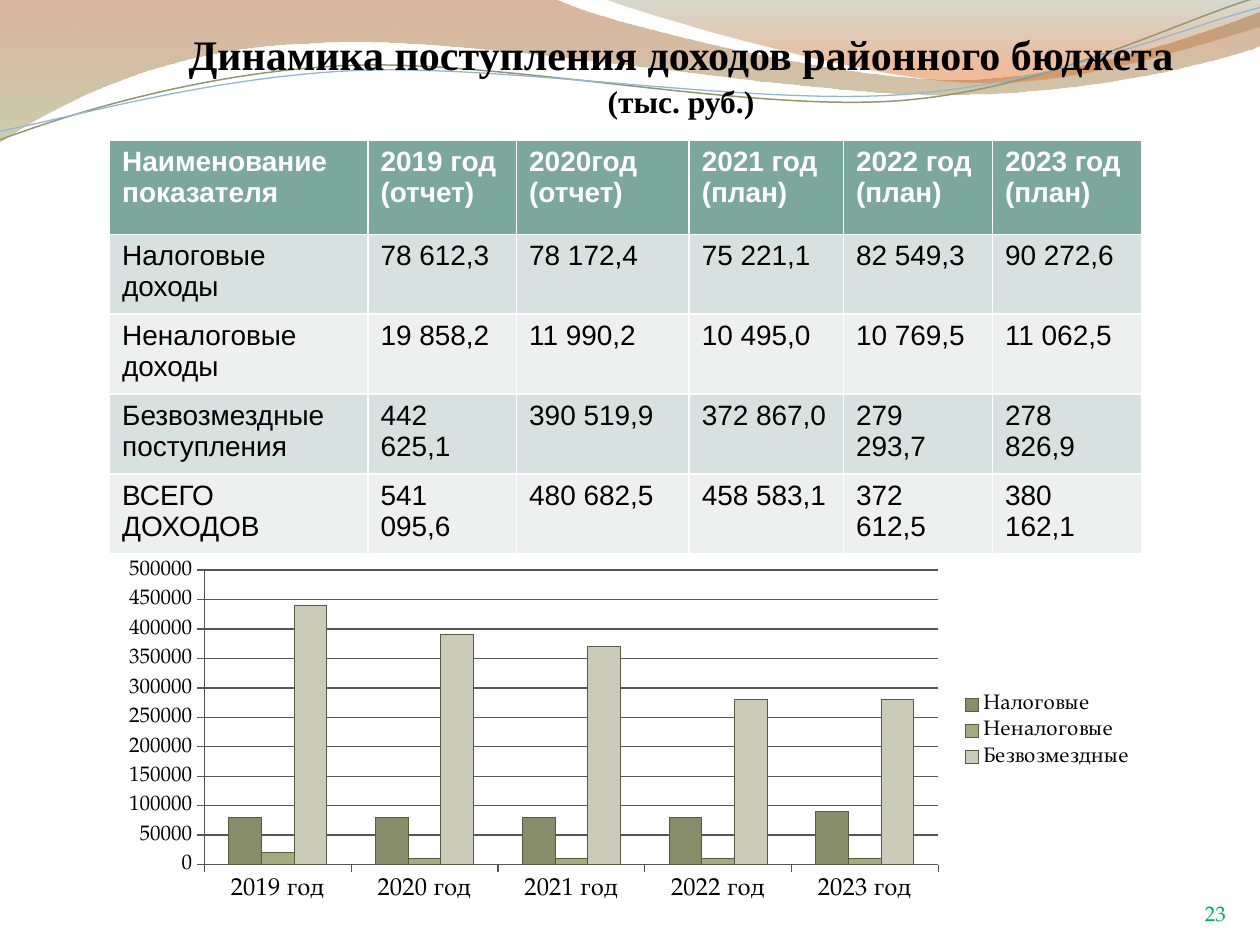
import dataclasses

import lxml.etree
import pptx
import pptx.chart.data
import pptx.dml.color
import pptx.enum.chart
import pptx.enum.text
import pptx.oxml.ns
import pptx.util

qn = pptx.oxml.ns.qn
Pt = pptx.util.Pt
ANCHOR = pptx.enum.text.MSO_ANCHOR
ALIGN = pptx.enum.text.PP_ALIGN


@dataclasses.dataclass(frozen=True)
class Theme:
    serif: str = "Times New Roman"
    sans: str = "Arial"
    body: str = "TeX Gyre Pagella"
    ink: str = "000000"
    white: str = "FFFFFF"
    header: str = "7BA79D"
    bands: tuple = ("D7E1DF", "ECF1EF")
    series: tuple = ("888D69", "A5AB81", "CACCB9")
    outline: str = "575B41"
    grid: str = "555555"
    number: str = "00B050"
    title_size: int = 24
    gap_size: int = 32
    unit_size: int = 18
    table_size: int = 16
    category_size: int = 14
    small_size: int = 12


HEADER = ["Наименование показателя", "2019 год (отчет)", "2020год (отчет)",
          "2021 год (план)", "2022 год (план)", "2023 год (план)"]
INCOME = [
    ["Налоговые доходы", "78 612,3", "78 172,4", "75 221,1", "82 549,3", "90 272,6"],
    ["Неналоговые доходы", "19 858,2", "11 990,2", "10 495,0", "10 769,5", "11 062,5"],
    ["Безвозмездные поступления", "442 625,1", "390 519,9", "372 867,0", "279 293,7", "278 826,9"],
    ["ВСЕГО ДОХОДОВ", "541 095,6", "480 682,5", "458 583,1", "372 612,5", "380 162,1"],
]
YEARS = [f"{year} год" for year in range(2019, 2024)]
SERIES = [
    ("Налоговые", (80000, 80000, 80000, 80000, 90000)),
    ("Неналоговые", (20000, 10000, 10000, 10000, 10000)),
    ("Безвозмездные", (440000, 390000, 370000, 280000, 280000)),
]

LEFT_WAVE = [(-0.1, -0.1), (44, -0.1), (47.6, 1.7, 66.4, 6.3, 75.8, 6.3), (85.3, 6.3, 95.8, 2.6, 100, 0.9),
             (100.1, 3.6), (98.3, 4.4, 87, 7.6, 74.6, 7.5), (62.2, 7.5, 38.2, 2.8, 25.7, 3.4),
             (12.9, 3.6, 4.6, 8.3, -0.1, 11.3)]
RIGHT_WAVE = [(47.9, -0.1), (50.9, 1.1, 68.2, 6.2, 76.9, 6.5), (85.6, 6.9, 96.1, 3.2, 100, 2.1), (100, 0)]
OLIVE_CURVE = [(0, 11.1), (4.8, 9.3, 15.8, 5.7, 27.7, 5.2), (39.5, 4.7, 59.3, 8.9, 71.3, 8),
               (83.3, 7.1, 93.8, 1.5, 99.8, -0.2)]
BLUE_CURVE = [(0, 10.4), (4.7, 9.6, 16.4, 6.1, 28.3, 5.6), (40.3, 5.1, 59.7, 8.4, 71.7, 7.5),
              (83.6, 6.7, 94.1, 2.1, 100, 0.6)]


def rgb(value):
    """Return a colour from its hexadecimal form."""
    return pptx.dml.color.RGBColor.from_string(value)


class SlideBuilder:
    """Draw elements on the current slide, on a grid of 100 columns and 75 rows."""

    def __init__(self, presentation, theme):
        """Add a blank slide and set up its grid."""
        self.theme = theme
        self.slide = presentation.slides.add_slide(presentation.slide_layouts[6])
        self.unit = presentation.slide_width // 100

    def span(self, *lengths):
        """Turn grid lengths into slide lengths."""
        return [round(length * self.unit) for length in lengths]

    def run(self, paragraph, text, size, font, colour, bold=False):
        """Add one styled run."""
        run = paragraph.add_run()
        run.text = text
        run.font.size, run.font.name, run.font.bold = Pt(size), font, bold
        run.font.color.rgb = rgb(colour)

    def outline(self, steps, close):
        """Add a shadowless freeform whose six-number steps are cubic curves."""
        anchors = [self.span(*step[-2:]) for step in steps]
        builder = self.slide.shapes.build_freeform(*anchors[0], scale=1.0)
        builder.add_line_segments(anchors[1:], close=close)
        shape = builder.convert_to_shape()
        shape.shadow.inherit = False
        segments = list(shape.element.spPr.iter(qn("a:lnTo")))
        for segment, step in zip(segments, steps[1:]):
            if len(step) == 2:
                continue
            curve = lxml.etree.Element(qn("a:cubicBezTo"))
            for x, y in zip(self.span(*step[::2]), self.span(*step[1::2])):
                lxml.etree.SubElement(curve, qn("a:pt"), x=str(x - shape.left), y=str(y - shape.top))
            segment.getparent().replace(segment, curve)
        return shape

    def wave(self, steps, stops):
        """Add a filled wave with a translucent vertical gradient."""
        shape = self.outline(steps, True)
        shape.line.fill.background()
        shape.fill.gradient()
        shape.fill.gradient_angle = 270
        elements = shape.element.spPr.iter(qn("a:gs"))
        for stop, element, (position, colour, opacity) in zip(shape.fill.gradient_stops, elements, stops):
            stop.color.rgb = rgb(colour)
            element.set("pos", str(position * 1000))
            lxml.etree.SubElement(element[0], qn("a:alpha")).set("val", str(opacity * 1000))

    def curve(self, steps, colour, width):
        """Add a thin open curve."""
        shape = self.outline(steps, False)
        shape.fill.background()
        shape.line.color.rgb = rgb(colour)
        shape.line.width = Pt(width)

    def text(self, box, runs, align, margin_right=0, indent=0):
        """Add a bottom-anchored text box of one paragraph."""
        frame = self.slide.shapes.add_textbox(*self.span(*box)).text_frame
        frame.word_wrap = True
        frame.vertical_anchor = ANCHOR.BOTTOM
        frame.margin_left = frame.margin_top = frame.margin_bottom = 0
        frame.margin_right = self.span(margin_right)[0]
        paragraph = frame.paragraphs[0]
        paragraph.alignment = align
        if indent:
            paragraph._p.get_or_add_pPr().set("marL", str(self.span(indent)[0]))
        for run in runs:
            self.run(paragraph, *run)

    def table(self, box, widths, heights, rows):
        """Add a table with a header and alternating bands."""
        theme = self.theme
        frame = self.slide.shapes.add_table(len(rows), len(widths), *self.span(*box))
        for column, width in zip(frame.table.columns, self.span(*widths)):
            column.width = width
        for index, (row, height, texts) in enumerate(zip(frame.table.rows, self.span(*heights), rows)):
            row.height = height
            heading = index == 0
            fill = theme.header if heading else theme.bands[(index - 1) % 2]
            colour = theme.white if heading else theme.ink
            for cell, text in zip(row.cells, texts):
                cell.fill.solid()
                cell.fill.fore_color.rgb = rgb(fill)
                self.run(cell.text_frame.paragraphs[0], text, theme.table_size, theme.sans, colour, heading)
        frame.height = self.span(box[3])[0]

    def chart(self, box, categories, series):
        """Add a clustered column chart with a legend on the right."""
        theme = self.theme
        data = pptx.chart.data.CategoryChartData()
        data.categories = categories
        for name, values in series:
            data.add_series(name, values)
        kind = pptx.enum.chart.XL_CHART_TYPE.COLUMN_CLUSTERED
        chart = self.slide.shapes.add_chart(kind, *self.span(*box), data).chart
        chart.has_title = False
        chart.font.name, chart.font.size = theme.body, Pt(theme.unit_size)
        chart.font.color.rgb = rgb(theme.ink)
        chart.has_legend = True
        chart.legend.position = pptx.enum.chart.XL_LEGEND_POSITION.RIGHT
        chart.legend.include_in_layout = False
        chart.legend.font.size = Pt(theme.small_size)
        plot = chart.plots[0]
        plot.gap_width, plot.vary_by_categories = 150, False
        for column, colour in zip(plot.series, theme.series):
            column.format.fill.solid()
            column.format.fill.fore_color.rgb = rgb(colour)
            column.format.line.color.rgb = rgb(theme.outline)
        axes = ((chart.category_axis, theme.category_size), (chart.value_axis, theme.small_size))
        for axis, size in axes:
            axis.tick_labels.font.size = Pt(size)
            axis.major_tick_mark = pptx.enum.chart.XL_TICK_MARK.OUTSIDE
            axis.format.line.color.rgb = rgb(theme.grid)
        scale = chart.value_axis
        scale.minimum_scale, scale.maximum_scale, scale.major_unit = 0, 500000, 50000
        scale.major_gridlines.format.line.color.rgb = rgb(theme.grid)


def main():
    """Build the budget income slide."""
    presentation = pptx.Presentation()
    presentation.slide_width, presentation.slide_height = pptx.util.Inches(10), pptx.util.Inches(7.5)
    theme = Theme()
    page = SlideBuilder(presentation, theme)
    page.wave(LEFT_WAVE, [(0, "AF5C29", 45), (100, "9DA66B", 55)])
    page.wave(RIGHT_WAVE, [(0, "7D835B", 30), (80, "DD6B24", 45)])
    page.curve(OLIVE_CURVE, "929772", 0.85)
    page.curve(BLUE_CURVE, "94B6D2", 0.75)
    title = [("Динамика поступления доходов районного бюджета", theme.title_size),
             (" ", theme.gap_size), ("(тыс. руб.)", theme.unit_size)]
    runs = [(text, size, theme.serif, theme.ink, True) for text, size in title]
    page.text((11.4, 1.6, 83.5, 7.9), runs, ALIGN.CENTER, margin_right=0.2, indent=2)
    page.table((8.7, 11.1, 81.9, 31.7), [20.5, 11.8, 13.7, 12.25, 11.82, 11.82],
               [7.5, 4.8, 5.7, 5.7, 3.3], [HEADER] + INCOME)
    page.chart((8.6, 43.85, 82.4, 28.3), YEARS, SERIES)
    page.text((77.3, 69.5, 20, 4), [("23", theme.small_size, theme.body, theme.number)], ALIGN.RIGHT)
    presentation.save("out.pptx")


if __name__ == "__main__":
    main()
